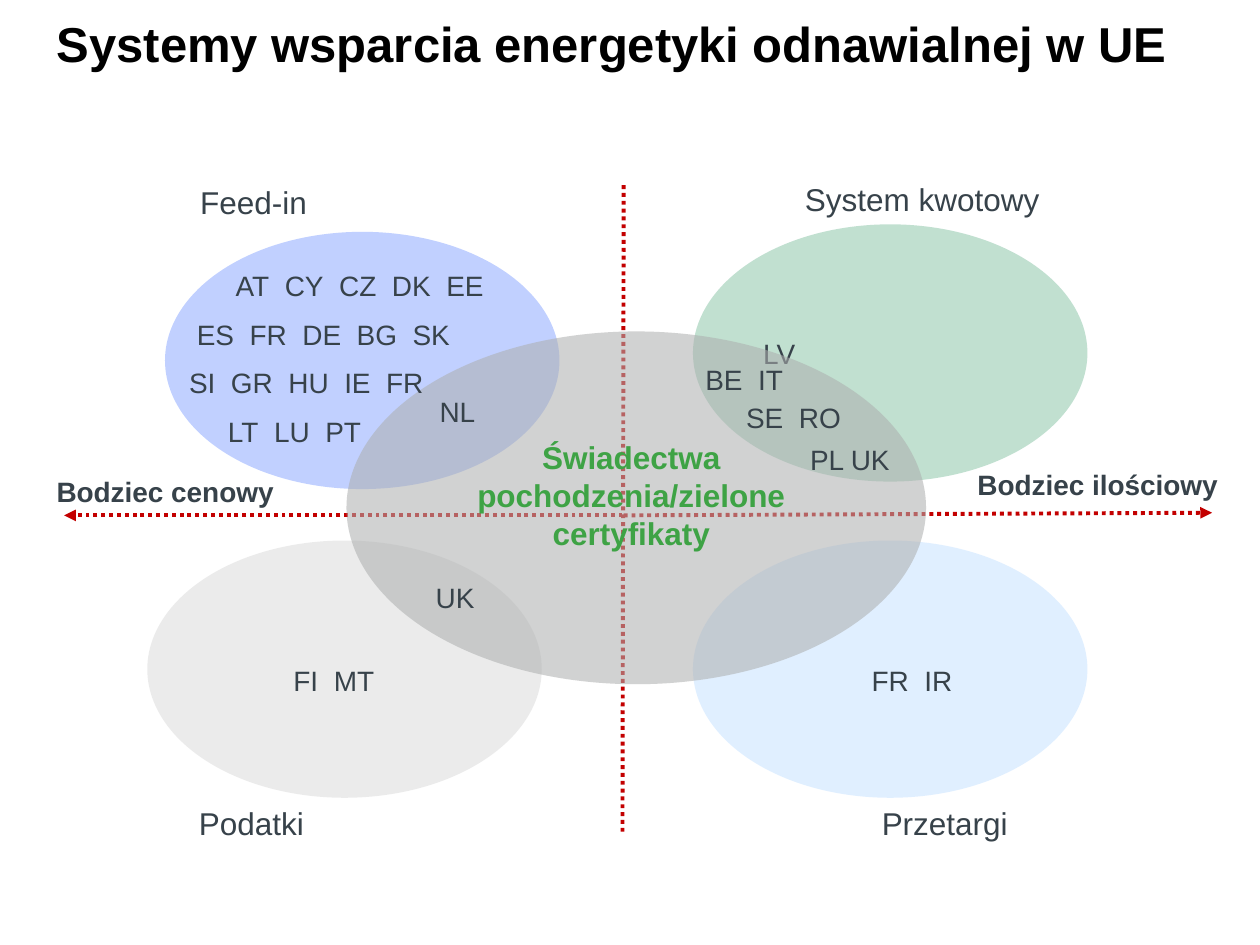
from lxml import etree
from pptx import Presentation
from pptx.dml.color import RGBColor
from pptx.enum import dml, shapes, text
from pptx.oxml import ns
from pptx.util import Pt

RED = RGBColor(0xC3, 0x00, 0x00)
GREEN = RGBColor(0x33, 0x99, 0x66)
BLUE = RGBColor(0x33, 0x66, 0xFF)
SILVER = RGBColor(0xC0, 0xC0, 0xC0)
SKY = RGBColor(0x99, 0xCC, 0xFF)
GREY = RGBColor(0xAD, 0xAF, 0xAF)
SLATE = RGBColor(0x37, 0x42, 0x4A)
LEAF = RGBColor(0x3E, 0xA3, 0x45)
BLACK = RGBColor(0, 0, 0)

FONT = "Arial"
CODE_SIZE = 16
CODE_GAP = "445"  # extra width of the space between codes, in 1/100 pt
ELLIPSE_W, ELLIPSE_H = 225.4, 147


def style(p, size, color=SLATE, bold=False):
    for r in p.runs:
        r.font.name = FONT
        r.font.size = Pt(size)
        r.font.bold = bold
        r.font.color.rgb = color


def add_axis(slide, x1, y1, x2, y2, arrow=True):
    line = slide.shapes.add_connector(
        shapes.MSO_CONNECTOR.STRAIGHT, Pt(x1), Pt(y1), Pt(x2), Pt(y2))
    line.line.color.rgb = RED
    line.line.width = Pt(2.25)
    line.line.dash_style = dml.MSO_LINE.ROUND_DOT
    if arrow:
        etree.SubElement(line.line._get_or_add_ln(), ns.qn("a:tailEnd"), type="triangle")
    etree.SubElement(line._element.spPr, ns.qn("a:effectLst"))


def add_ellipse(slide, x, y, color, opacity, w=ELLIPSE_W, h=ELLIPSE_H):
    sp = slide.shapes.add_shape(shapes.MSO_SHAPE.OVAL, Pt(x), Pt(y), Pt(w), Pt(h))
    sp.shadow.inherit = False
    sp.line.fill.background()
    sp.fill.solid()
    sp.fill.fore_color.rgb = color
    srgb = sp._element.spPr.find(".//" + ns.qn("a:srgbClr"))
    etree.SubElement(srgb, ns.qn("a:alpha"), val=str(opacity * 1000))
    return sp


def add_box(slide, x, y, w, h):
    tf = slide.shapes.add_textbox(Pt(x), Pt(y), Pt(w), Pt(h)).text_frame
    tf.word_wrap = True
    return tf


def add_label(slide, x, y, w, h, label, size, color=SLATE, bold=False):
    tf = add_box(slide, x, y, w, h)
    tf.text = label
    style(tf.paragraphs[0], size, color, bold)
    return tf


def add_codes(slide, x, y, w, h, rows):
    """Add rows of (indent, country codes), with wide spaces between the codes."""
    tf = add_box(slide, x, y, w, h)
    for i, (indent, codes) in enumerate(rows):
        p = tf.add_paragraph() if i else tf.paragraphs[0]
        if i:
            p.space_before = Pt(8.7)
        p._p.get_or_add_pPr().set("marL", str(Pt(indent)))
        for j, code in enumerate(codes.split()):
            if j:
                gap = p.add_run()
                gap.text = " "
                gap.font._element.set("spc", CODE_GAP)
            p.add_run().text = code
        style(p, CODE_SIZE)


def add_quadrants(slide):
    quota = add_ellipse(slide, 396, 128.2, GREEN, 30)
    tf = quota.text_frame
    tf.word_wrap = False
    tf.vertical_anchor = text.MSO_ANCHOR.MIDDLE
    tf.text = "LV"
    tf.paragraphs[0].alignment = text.PP_ALIGN.LEFT
    style(tf.paragraphs[0], CODE_SIZE)

    add_ellipse(slide, 84.2, 308.9, SILVER, 30)
    add_ellipse(slide, 94.3, 132.5, BLUE, 30)
    add_ellipse(slide, 396, 308.9, SKY, 30)
    add_ellipse(slide, 198, 189.4, GREY, 56, 331.2, 201.6)


def main():
    prs = Presentation()
    prs.slide_width, prs.slide_height = Pt(720), Pt(540)
    slide = prs.slides.add_slide(prs.slide_layouts[6])

    add_axis(slide, 356.4, 294.5, 692.6, 293)
    add_axis(slide, 355.7, 294.5, 36.7, 294.5)
    add_axis(slide, 356.4, 105.8, 355.7, 477.4, arrow=False)
    add_quadrants(slide)

    for x, y, w, codes in [
        (396, 203.8, 73.4, "BE IT"),
        (419.3, 225.4, 103.4, "SE RO"),
        (244.1, 221.8, 43.2, "NL"),
        (491, 375.8, 60.5, "FR IR"),
        (241.9, 328.3, 45.4, "UK"),
        (160.6, 375.8, 81.4, "FI MT"),
    ]:
        add_codes(slide, x, y, w, 26.6, [(0, codes)])
    add_codes(slide, 96.5, 149.8, 215.3, 113, [
        (31.1, "AT CY CZ DK EE"),
        (8.9, "ES FR DE BG SK"),
        (4.45, "SI GR HU IE FR"),
        (26.7, "LT LU PT"),
    ])
    add_label(slide, 455.8, 249.1, 82.1, 26.6, "PL UK", CODE_SIZE)

    for x, y, w, name in [
        (107.3, 100.8, 142.6, "Feed-in"),
        (496.8, 455.8, 103, "Przetargi"),
        (106.6, 455.8, 149, "Podatki"),
        (452.9, 99.4, 167, "System kwotowy"),
    ]:
        add_label(slide, x, y, w, 31, name, 18)

    certificates = add_label(slide, 247, 247, 227.5, 102.2,
                             "Świadectwa pochodzenia/zielone certyfikaty", 18, LEAF, True)
    certificates.paragraphs[0].alignment = text.PP_ALIGN.CENTER

    add_label(slide, 25.2, 267.8, 142.6, 26.6, "Bodziec cenowy", 16, bold=True)
    add_label(slide, 551.5, 263.5, 168.5, 26.6, "Bodziec ilościowy", 16, bold=True)

    title = add_label(slide, 32.4, 10.1, 643.7, 49.7,
                      "Systemy wsparcia energetyki odnawialnej w UE", 28, BLACK, True)
    title.margin_left = title.margin_right = title.margin_top = title.margin_bottom = 0
    title.paragraphs[0].line_spacing = 0.96

    prs.save("out.pptx")


if __name__ == "__main__":
    main()
